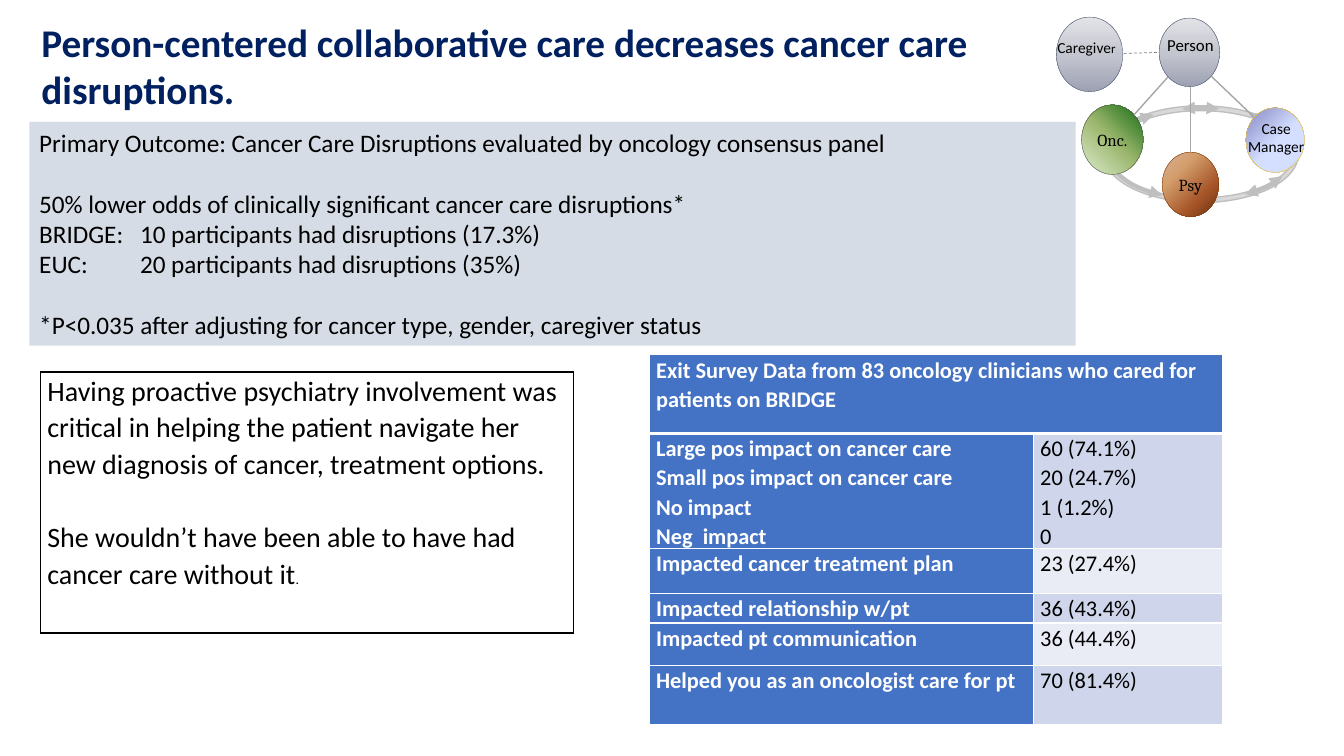
from lxml import etree
from pptx import Presentation
from pptx.dml.color import RGBColor
from pptx.enum.dml import MSO_LINE
from pptx.enum.shapes import MSO_CONNECTOR, MSO_SHAPE
from pptx.enum.text import MSO_ANCHOR, MSO_AUTO_SIZE, PP_ALIGN
from pptx.oxml.ns import qn
from pptx.util import Inches, Pt

WIDTH, HEIGHT = Inches(13.333), Inches(7.5)
ARC, DONUT, OVAL, RECT = MSO_SHAPE.ARC, MSO_SHAPE.DONUT, MSO_SHAPE.OVAL, MSO_SHAPE.RECTANGLE
STRAIGHT, DASH = MSO_CONNECTOR.STRAIGHT, MSO_LINE.DASH
LEFT, CENTER = PP_ALIGN.LEFT, PP_ALIGN.CENTER
TOP, MIDDLE = MSO_ANCHOR.TOP, MSO_ANCHOR.MIDDLE

NAVY = RGBColor(0x00, 0x20, 0x60)
BLACK = RGBColor(0x00, 0x00, 0x00)
WHITE = RGBColor(0xFF, 0xFF, 0xFF)
PANEL = RGBColor(0xD6, 0xDC, 0xE5)
BLUE = RGBColor(0x44, 0x72, 0xC4)
BANDS = RGBColor(0xCF, 0xD5, 0xEA), RGBColor(0xE9, 0xEB, 0xF5)
RING = RGBColor(0xD9, 0xD9, 0xD9)
RING_EDGE = RGBColor(0xBF, 0xBF, 0xBF)
LINK = RGBColor(0xA6, 0xA6, 0xA6)
DASHED_LINK = RGBColor(0x80, 0x80, 0x80)
SLATE = RGBColor(0x44, 0x54, 0x6A)
BROWN = RGBColor(0x84, 0x3C, 0x0B)
GRAY = RGBColor(0x52, 0x52, 0x52)
GOLD = RGBColor(0xFF, 0xC0, 0x00)

STEEL_STOPS = [(0, RGBColor(0x9D, 0xA1, 0xB3)), (50, RGBColor(0xC4, 0xC6, 0xCF)),
               (100, RGBColor(0xE2, 0xE3, 0xE7))]
COPPER_STOPS = [(0, RGBColor(0xD6, 0xB1, 0x9C)), (30, RGBColor(0xD4, 0x9E, 0x6C)),
                (70, RGBColor(0xA6, 0x55, 0x28)), (100, RGBColor(0x66, 0x30, 0x12))]
GREEN_STOPS = [(0, RGBColor(0xDD, 0xEB, 0xCF)), (50, RGBColor(0x9C, 0xB8, 0x6E)),
               (100, RGBColor(0x15, 0x6B, 0x13))]
LILAC_STOPS = [(0, RGBColor(0x84, 0x88, 0xC4)), (53, RGBColor(0xD4, 0xDE, 0xFF)),
               (83, RGBColor(0xD4, 0xDE, 0xFF)), (100, RGBColor(0x96, 0xAB, 0x94))]

OUTCOME = [
    ("Primary Outcome: Cancer Care Disruptions evaluated by oncology consensus panel", 0),
    ("50% lower odds of clinically significant cancer care disruptions*", 22),
    ("BRIDGE:\t10 participants had disruptions (17.3%)", 0),
    ("EUC:\t20 participants had disruptions (35%)", 0),
    ("*P<0.035 after adjusting for cancer type, gender, caregiver status", 22),
]
SURVEY_TITLE = "Exit Survey Data from 83 oncology clinicians who cared for patients on BRIDGE"
SURVEY = [
    (["Large pos impact on cancer care", "Small pos impact on cancer care",
      "No impact", "Neg  impact"],
     ["60 (74.1%)", "20 (24.7%)", "1 (1.2%)", "0"]),
    (["Impacted cancer treatment plan"], ["23 (27.4%)"]),
    (["Impacted relationship w/pt"], ["36 (43.4%)"]),
    (["Impacted pt communication"], ["36 (44.4%)"]),
    (["Helped you as an oncologist care for pt"], ["70 (81.4%)"]),
]
QUOTE = [
    "Having proactive psychiatry involvement was critical in helping the patient "
    "navigate her new diagnosis of cancer, treatment options.",
    "She wouldn’t have been able to have had cancer care without it",
]


def across(percent):
    return int(WIDTH * percent / 100)


def down(percent):
    return int(HEIGHT * percent / 100)


def area(x, y, w, h):
    return across(x), down(y), across(w), down(h)


def style(paragraph, size, color=BLACK, bold=False, face="Calibri", align=LEFT):
    paragraph.alignment = align
    font = paragraph.font
    font.name, font.size, font.bold = face, Pt(size), bold
    font.color.rgb = color


def add_figure(slide, kind, box, edge, weight):
    figure = slide.shapes.add_shape(kind, *area(*box))
    figure.shadow.inherit = False
    figure.line.color.rgb = edge
    figure.line.width = Pt(weight)
    return figure


def add_arrowheads(line):
    outline = line.line._get_or_add_ln()
    for end in ("a:headEnd", "a:tailEnd"):
        etree.SubElement(outline, qn(end), type="triangle")


def add_member(slide, box, stops, angle, edge, label=None):
    member = add_figure(slide, OVAL, box, edge, 0.25)
    gradient = etree.Element(qn("a:gradFill"), rotWithShape="1")
    stop_list = etree.SubElement(gradient, qn("a:gsLst"))
    for position, color in stops:
        stop = etree.SubElement(stop_list, qn("a:gs"), pos=str(position * 1000))
        etree.SubElement(stop, qn("a:srgbClr"), val=str(color))
    etree.SubElement(gradient, qn("a:lin"), ang=str(angle * 60000), scaled="0")
    member._element.spPr.find(qn("a:prstGeom")).addnext(gradient)
    if label:
        frame = member.text_frame
        frame.margin_left = frame.margin_right = 0
        frame.vertical_anchor = MIDDLE
        frame.text = label
        style(frame.paragraphs[0], 12, face="Cambria", align=CENTER)


def add_label(slide, box, text, size, align=CENTER):
    frame = slide.shapes.add_textbox(*area(*box)).text_frame
    frame.word_wrap = True
    frame.text = text
    style(frame.paragraphs[0], size, align=align)
    return frame.paragraphs[0]


def add_link(slide, start, end, color=LINK, weight=1, dash=None):
    link = slide.shapes.add_connector(
        STRAIGHT, across(start[0]), down(start[1]), across(end[0]), down(end[1]))
    link.line.color.rgb = color
    link.line.width = Pt(weight)
    if dash:
        link.line.dash_style = dash
    etree.SubElement(link._element.spPr, qn("a:effectLst"))


def fill_cell(cell, lines, size, color, bold, fill, edge, bottom=1, gap=0):
    properties = cell._tc.get_or_add_tcPr()
    for side in "LRTB":
        weight = bottom if side == "B" else 1
        border = etree.SubElement(properties, qn("a:ln" + side), w=str(Pt(weight)))
        paint = etree.SubElement(border, qn("a:solidFill"))
        etree.SubElement(paint, qn("a:srgbClr"), val=str(edge))
    if fill is None:
        cell.fill.background()
    else:
        cell.fill.solid()
        cell.fill.fore_color.rgb = fill
    cell.margin_left = cell.margin_right = Inches(0.07)
    cell.margin_top = cell.margin_bottom = 0
    cell.text = "\n".join(lines)
    for index, paragraph in enumerate(cell.text_frame.paragraphs):
        style(paragraph, size, color, bold)
        paragraph.line_spacing = 1.07
        if index and gap:
            paragraph.space_before = Pt(gap)


def add_grid(slide, x, y, columns, rows):
    box = area(x, y, sum(columns), sum(rows))
    table = slide.shapes.add_table(len(rows), len(columns), *box).table
    table.first_row = table.horz_banding = False
    for column, share in zip(table.columns, columns):
        column.width = across(share)
    for row, share in zip(table.rows, rows):
        row.height = down(share)
    return table


def add_title(slide):
    title = slide.shapes.title
    title.left, title.top, title.width, title.height = area(2.33, 1.73, 75, 11.07)
    frame = title.text_frame
    frame.auto_size = MSO_AUTO_SIZE.NONE
    frame.vertical_anchor = TOP
    frame.text = "Person-centered collaborative care decreases cancer care disruptions."
    style(frame.paragraphs[0], 28, NAVY, True)


def add_care_team(slide):
    ring = add_figure(slide, DONUT, (82.13, 14, 14.48, 12.8), RING_EDGE, 1)
    ring.adjustments[0] = 0.05
    ring.fill.solid()
    ring.fill.fore_color.rgb = RING
    for angles in ((133.37, 219.13), (246.84, 291.41), (320.31, 346.46),
                   (15.56, 42.96), (70.18, 110.97)):
        arc = add_figure(slide, ARC, (82.5, 14.27, 13.8, 12.13), RING_EDGE, 3)
        for index, degrees in enumerate(angles):
            arc.adjustments[index] = degrees * 0.6
        arc.fill.background()
        add_arrowheads(arc)
    add_member(slide, (86.48, 20.13, 4.2, 8.53), COPPER_STOPS, 45, BROWN, "Psy")
    add_member(slide, (80.48, 13.87, 4.58, 9.2), GREEN_STOPS, 315, GRAY, "Onc.")
    add_member(slide, (92.7, 14.27, 4.35, 8.53), LILAC_STOPS, 45, GOLD)
    add_label(slide, (92.03, 15.07, 5.85, 6.27), "Case Manager", 11)
    add_link(slide, (86.93, 10.13), (84.38, 15.2))
    add_link(slide, (88.58, 11.47), (88.58, 20.13))
    add_link(slide, (90.15, 10.13), (93.3, 15.47))
    add_member(slide, (86.25, 2.4, 4.5, 9.07), STEEL_STOPS, 270, SLATE)
    add_label(slide, (85.65, 4, 5.85, 4), "Person", 12)
    add_member(slide, (78.6, 2.27, 4.95, 9.87), STEEL_STOPS, 270, SLATE)
    caregiver = add_label(slide, (77.93, 4.4, 6.98, 3.87), "Caregive", 11, LEFT)
    last_letter = caregiver.add_run()
    last_letter.text = "r"
    last_letter.font.size = Pt(9.3)
    add_link(slide, (83.63, 7.07), (86.25, 6.93), DASHED_LINK, 0.5, DASH)


def add_outcome(slide):
    panel = add_figure(slide, RECT, (2.18, 16.13, 77.85, 29.6), PANEL, 1)
    panel.line.fill.background()
    panel.fill.solid()
    panel.fill.fore_color.rgb = PANEL
    frame = panel.text_frame
    frame.vertical_anchor = TOP
    frame.text = "\n".join(text for text, _ in OUTCOME)
    for paragraph, (text, gap) in zip(frame.paragraphs, OUTCOME):
        if gap:
            paragraph.space_before = Pt(gap)
        if "\t" in text:
            tabs = etree.SubElement(paragraph._p.get_or_add_pPr(), qn("a:tabLst"))
            etree.SubElement(tabs, qn("a:tab"), pos=str(Inches(1)), algn="l")
        style(paragraph, 18)


def add_survey(slide):
    table = add_grid(slide, 48.3, 46.93, (28.58, 14.1), (10.4, 15.07, 6, 3.87, 5.6, 7.87))
    table.cell(0, 0).merge(table.cell(0, 1))
    fill_cell(table.cell(0, 0), [SURVEY_TITLE], 16, WHITE, True, BLUE, WHITE, bottom=3)
    for row, (questions, answers) in enumerate(SURVEY, 1):
        fill_cell(table.cell(row, 0), questions, 16, WHITE, True, BLUE, WHITE)
        fill_cell(table.cell(row, 1), answers, 16, BLACK, False, BANDS[(row - 1) % 2], WHITE)


def add_quote(slide):
    cell = add_grid(slide, 3, 49.2, (39.68,), (34.53,)).cell(0, 0)
    fill_cell(cell, QUOTE, 20, BLACK, False, None, BLACK, gap=26)
    full_stop = cell.text_frame.paragraphs[-1].add_run()
    full_stop.text = "."
    full_stop.font.size = Pt(10)


def main():
    deck = Presentation()
    deck.slide_width, deck.slide_height = WIDTH, HEIGHT
    slide = deck.slides.add_slide(deck.slide_layouts[5])
    add_title(slide)
    add_care_team(slide)
    add_outcome(slide)
    add_survey(slide)
    add_quote(slide)
    deck.save("out.pptx")


if __name__ == "__main__":
    main()
